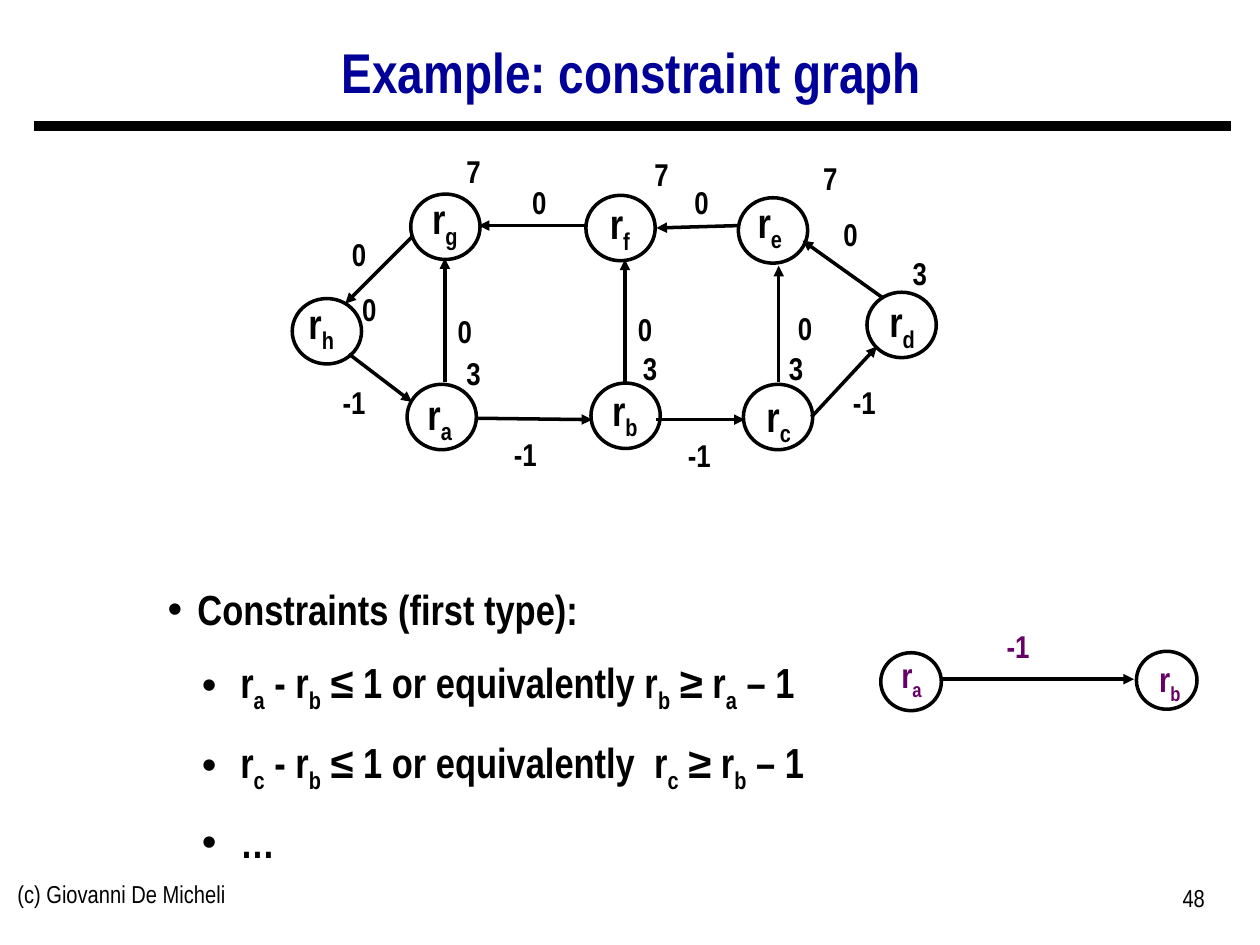
from lxml import etree
from pptx import Presentation
from pptx.dml.color import RGBColor
from pptx.enum.shapes import MSO_CONNECTOR, MSO_SHAPE
from pptx.enum.text import MSO_ANCHOR, MSO_AUTO_SIZE, PP_ALIGN
from pptx.oxml.ns import qn
from pptx.util import Pt

BLACK = RGBColor(0x00, 0x00, 0x00)
WHITE = RGBColor(0xFF, 0xFF, 0xFF)
NAVY = RGBColor(0x00, 0x00, 0x99)
PURPLE = RGBColor(0x66, 0x00, 0x66)
LEFT, CENTER, RIGHT = PP_ALIGN.LEFT, PP_ALIGN.CENTER, PP_ALIGN.RIGHT
TOP, MIDDLE = MSO_ANCHOR.TOP, MSO_ANCHOR.MIDDLE
NO_AUTOFIT = MSO_AUTO_SIZE.NONE
STRAIGHT = MSO_CONNECTOR.STRAIGHT
CIRCLE, NODE = MSO_SHAPE.OVAL, MSO_SHAPE.FLOWCHART_CONNECTOR
FONT = "Arial Narrow"

# Content: in marked-up text, every second piece between bars is a subscript
TITLE = "Example: constraint graph"
FOOTER, PAGE = "(c) Giovanni De Micheli", "48"
CONSTRAINTS = [
    (0, "Constraints (first type):"),
    (1, "r|a| - r|b| ≤ 1 or equivalently r|b| ≥ r|a| – 1"),
    (1, "r|c| - r|b| ≤ 1 or equivalently  r|c| ≥ r|b| – 1"),
    (1, "…"),
]
# name, circle corner, label corner, start time, time corner
NODES = [
    ("r|a", (232.6, 219.6), (200.9, 218.2), "3", (249.1, 198.7)),
    ("r|b", (337.7, 218.9), (306.7, 216), "3", (349.9, 195.8)),
    ("r|c", (424.8, 219.6), (394.6, 219.6), "3", (433.4, 195.8)),
    ("r|d", (495.4, 167), (465.1, 165.6), "3", (504, 141.8)),
    ("r|e", (421.9, 113), (389.5, 108.7), "7", (452.9, 87.1)),
    ("r|f", (334.8, 111.6), (303.8, 109.4), "7", (356.4, 85)),
    ("r|g", (234.7, 110.9), (203.8, 106.6), "7", (249.1, 83.5)),
    ("r|h", (167, 170.6), (133.2, 166.3), "0", (189.4, 162)),
]
# start, end, weight, weight corner
EDGES = [
    ((254.2, 218.2), (254.2, 147.6), "0", (244.1, 175)),
    ((357.1, 218.2), (357.1, 148.3), "0", (347, 173.5)),
    ((445, 218.2), (445, 151.9), "0", (438.5, 172.8)),
    ((235.4, 135.4), (197.3, 173.5), "0", (183.6, 131)),
    ((334.1, 128.9), (273.6, 128.9), "0", (286.6, 100.8)),
    ((422.6, 128.9), (375.1, 130.3), "0", (379.4, 100.8)),
    ((504, 169.9), (458.6, 137.5), "0", (464.4, 119.5)),
    ((199.4, 202.3), (235.4, 229.7), "-1", (180.7, 215.3)),
    ((271.4, 239), (338.4, 239.8), "-1", (278.6, 244.8)),
    ((375.1, 239.8), (425.5, 239.8), "-1", (378, 245.5)),
    ((463.7, 238.3), (501.1, 198), "-1", (472.3, 215.3)),
]
NODE_SIZE, LABEL_SIZE, WEIGHT_SIZE = (39.6, 37.4), (100.8, 36), (43.2, 28.8)
# Single constraint: name, circle corner, label corner
PAIR = [
    ("r|a", (503.3, 373), (507.6, 370.1)),
    ("r|b", (649.4, 372.2), (655.2, 372.2)),
]
PAIR_SIZE, PAIR_LABEL_SIZE = (34.6, 33.1), (26.6, 31)
# left margin, hanging indent, space before for each list level
LEVELS = {0: (17, 17, 0), 1: (41.5, 22, 13)}


def write(paragraph, text, size, color=BLACK, bold=True, align=LEFT):
    paragraph.alignment = align
    formats = {"name": FONT, "size": Pt(size), "bold": bold}
    for index, piece in enumerate(text.split("|")):
        run = paragraph.add_run()
        run.text = piece
        for key, value in formats.items():
            setattr(run.font, key, value)
        run.font.color.rgb = color
        if index % 2:
            run._r.get_or_add_rPr().set("baseline", "-25000")


def place(shape, corner, size):
    box = dict(zip(("left", "top", "width", "height"), (*corner, *size)))
    for key, value in box.items():
        setattr(shape, key, Pt(value))


def add_text(slide, text, corner, size, points, wrap=True, **style):
    shape = slide.shapes.add_textbox(*map(Pt, (*corner, *size)))
    shape.text_frame.word_wrap = wrap
    write(shape.text_frame.paragraphs[0], text, points, **style)


def add_circle(slide, kind, corner, size, filled=False):
    shape = slide.shapes.add_shape(kind, *map(Pt, (*corner, *size)))
    shape.shadow.inherit = False
    if filled:
        shape.fill.solid()
        shape.fill.fore_color.rgb = WHITE
    else:
        shape.fill.background()
    shape.line.color.rgb = BLACK
    shape.line.width = Pt(2)


def add_line(slide, start, end, width=2, arrow=True):
    connector = slide.shapes.add_connector(STRAIGHT, *map(Pt, (*start, *end)))
    connector.line.color.rgb = BLACK
    connector.line.width = Pt(width)
    if arrow:
        etree.SubElement(connector.line._get_or_add_ln(), qn("a:tailEnd"), type="triangle")
    etree.SubElement(connector._element.spPr, qn("a:effectLst"))


def add_bullet(paragraph, level):
    margin, hanging, before = LEVELS[level]
    paragraph.level = level
    paragraph.space_before = Pt(before)
    properties = paragraph._p.get_or_add_pPr()
    properties.set("marL", str(Pt(margin)))
    properties.set("indent", str(-Pt(hanging)))
    etree.SubElement(properties, qn("a:buChar"), char="•")


def main():
    presentation = Presentation()
    presentation.slide_width, presentation.slide_height = Pt(720), Pt(540)
    slide = presentation.slides.add_slide(presentation.slide_layouts[1])
    title, body = slide.placeholders

    # Title, rule and footer
    place(title, (18.7, 15.8), (684.7, 54))
    title.text_frame.vertical_anchor = MIDDLE
    title.text_frame.auto_size = NO_AUTOFIT
    heading = title.text_frame.paragraphs[0]
    heading.line_spacing = 0.9
    write(heading, TITLE, 32, NAVY, align=CENTER)
    add_line(slide, (19.4, 72), (703.4, 72), width=6, arrow=False)
    add_text(slide, FOOTER, (2.9, 499), (228.2, 37.4), 14, bold=False)
    add_text(slide, PAGE, (527.8, 501.1), (167.8, 37.4), 14, bold=False, align=RIGHT)

    # Constraint list
    place(body, (88.6, 329.8), (563, 165.6))
    body.text_frame.vertical_anchor = TOP
    body.text_frame.auto_size = NO_AUTOFIT
    for index, (level, text) in enumerate(CONSTRAINTS):
        frame = body.text_frame
        paragraph = frame.add_paragraph() if index else frame.paragraphs[0]
        write(paragraph, text, 24)
        add_bullet(paragraph, level)

    # Constraint graph
    for start, end, weight, corner in EDGES:
        add_line(slide, start, end)
        add_text(slide, weight, corner, WEIGHT_SIZE, 18, align=CENTER)
    for name, circle, label, time, time_corner in NODES:
        add_circle(slide, NODE, circle, NODE_SIZE)
        add_text(slide, name, label, LABEL_SIZE, 24, align=CENTER)
        add_text(slide, time, time_corner, WEIGHT_SIZE, 18, align=CENTER)

    # Single constraint as an edge
    purple = {"wrap": False, "color": PURPLE, "align": CENTER}
    for name, circle, label in PAIR:
        add_circle(slide, CIRCLE, circle, PAIR_SIZE, filled=True)
        add_text(slide, name, label, PAIR_LABEL_SIZE, 20, **purple)
    add_text(slide, "-1", (568.1, 355), (27.4, 28.8), 18, **purple)
    add_line(slide, (537.1, 388.1), (648, 388.1))

    presentation.save("out.pptx")


if __name__ == "__main__":
    main()
